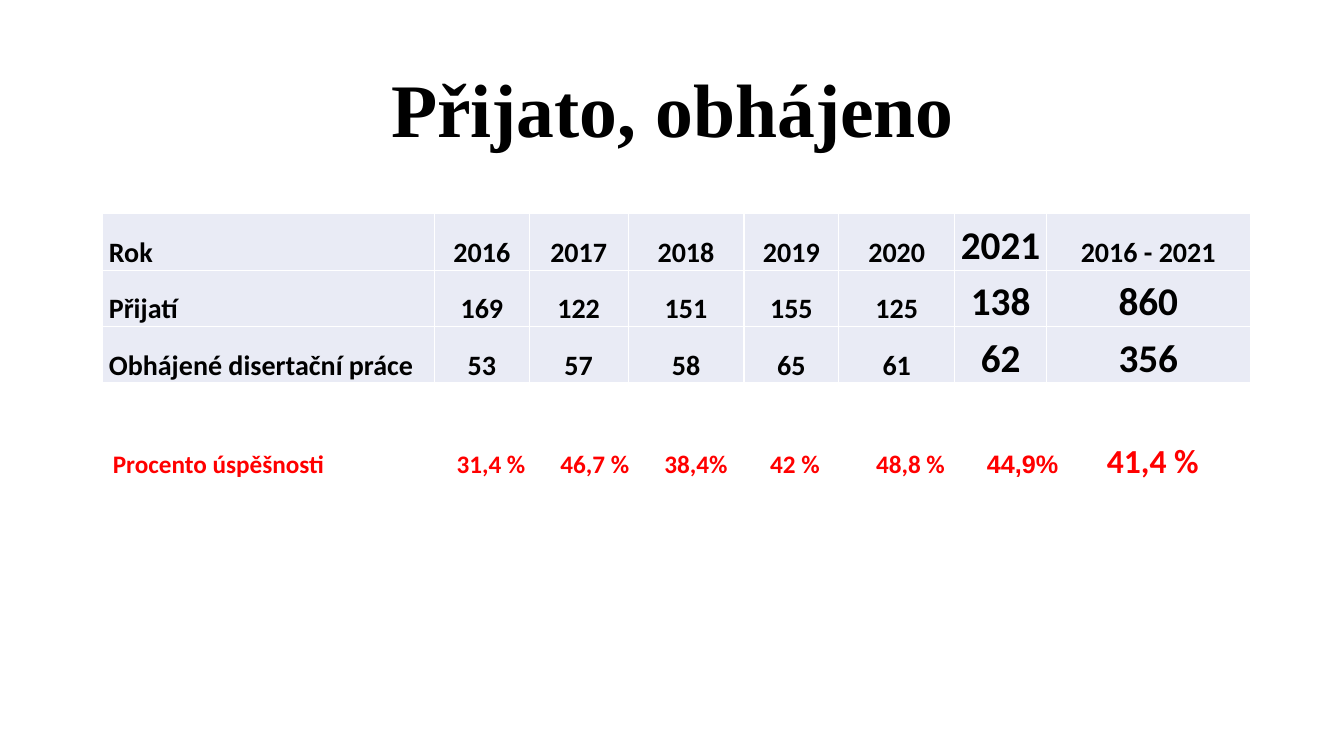
from lxml import etree
from pptx import Presentation
from pptx.dml.color import RGBColor
from pptx.enum.text import MSO_ANCHOR, PP_ALIGN
from pptx.oxml.ns import qn
from pptx.util import Inches, Pt

LEFT, CENTER = PP_ALIGN.LEFT, PP_ALIGN.CENTER
TOP, MIDDLE, BOTTOM = MSO_ANCHOR.TOP, MSO_ANCHOR.MIDDLE, MSO_ANCHOR.BOTTOM

BLACK, WHITE, RED, PALE_BLUE = "000000", "FFFFFF", "FF0000", "E9EBF5"

TABLE_ROWS = [
    ["Rok", "2016", "2017", "2018", "2019", "2020", "2021", "2016 - 2021"],
    ["Přijatí", "169", "122", "151", "155", "125", "138", "860"],
    ["Obhájené disertační práce", "53", "57", "58", "65", "61", "62", "356"],
]
COLUMN_WIDTHS = [3.29, 0.94, 0.98, 1.15, 0.94, 1.15, 0.91, 2.02]
ROW_HEIGHT = 0.56
LARGE_FROM_COLUMN = 6

# Each success rate with its tab stop in inches and its format
SUCCESS_RATES = [
    ("31,4 %", 3.41, {}),
    ("46,7 %", 4.44, {}),
    ("38,4%", 5.47, {}),
    ("42 %", 6.52, {}),
    ("48,8 %", 7.57, {}),
    ("44,9%", 8.67, {"font": "Arial"}),
    ("41,4 %", 9.86, {"size": 24}),
]


def color(value):
    return RGBColor.from_string(value)


def add_text(paragraph, text, size=18, font="Calibri", fill=BLACK,
             align=LEFT, spacing=1.07):
    paragraph.alignment = align
    paragraph.line_spacing = spacing
    run = paragraph.add_run()
    run.text = text
    run.font.name = font
    run.font.size = Pt(size)
    run.font.bold = True
    run.font.color.rgb = color(fill)


class SlideBuilder:
    def __init__(self, slide):
        self.slide = slide
        self.border_color = WHITE
        self.cell_fill = PALE_BLUE

    def text_box(self, left, top, width, height, anchor=TOP):
        box = self.slide.shapes.add_textbox(
            Inches(left), Inches(top), Inches(width), Inches(height))
        box.text_frame.word_wrap = True
        box.text_frame.vertical_anchor = anchor
        return box.text_frame.paragraphs[0]

    def cell_borders(self, cell):
        properties = cell._tc.get_or_add_tcPr()
        for position, side in enumerate(("lnL", "lnR", "lnT", "lnB")):
            line = etree.Element(qn(f"a:{side}"), w=str(Pt(1)))
            fill = etree.SubElement(line, qn("a:solidFill"))
            etree.SubElement(fill, qn("a:srgbClr"), val=self.border_color)
            properties.insert(position, line)

    def cell(self, cell, text, **text_format):
        cell.margin_left = cell.margin_right = 0
        cell.margin_top = cell.margin_bottom = 0
        cell.vertical_anchor = BOTTOM
        cell.fill.solid()
        cell.fill.fore_color.rgb = color(self.cell_fill)
        self.cell_borders(cell)
        add_text(cell.text_frame.paragraphs[0], text, **text_format)

    def table(self, left, top, rows, widths, row_height):
        table = self.slide.shapes.add_table(
            len(rows), len(widths), Inches(left), Inches(top),
            Inches(sum(widths)), Inches(row_height * len(rows))).table
        for column, width in zip(table.columns, widths):
            column.width = Inches(width)
        for row_index, values in enumerate(rows):
            table.rows[row_index].height = Inches(row_height)
            for column_index, value in enumerate(values):
                is_label = column_index == 0
                is_period = row_index == 0 and column_index == len(widths) - 1
                is_large = column_index >= LARGE_FROM_COLUMN and not is_period
                cell = table.cell(row_index, column_index)
                self.cell(cell, value, size=28 if is_large else 20,
                          align=LEFT if is_label else CENTER)
                if is_label:
                    cell.margin_left = Inches(0.06)

    def tabbed_line(self, paragraph, label, entries, fill):
        add_text(paragraph, label, fill=fill)
        tabs = etree.SubElement(paragraph._p.get_or_add_pPr(), qn("a:tabLst"))
        for text, position, text_format in entries:
            etree.SubElement(tabs, qn("a:tab"),
                             pos=str(Inches(position)), algn="l")
            add_text(paragraph, "\t" + text, fill=fill, **text_format)


def main():
    presentation = Presentation()
    presentation.slide_width = Inches(13.33)
    presentation.slide_height = Inches(7.5)
    builder = SlideBuilder(
        presentation.slides.add_slide(presentation.slide_layouts[6]))

    # Title
    title = builder.text_box(0.92, 0.4, 11.5, 1.45, anchor=MIDDLE)
    add_text(title, "Přijato, obhájeno", size=54, font="Times New Roman",
             align=CENTER, spacing=0.9)

    # Admissions and defended theses
    builder.table(1.02, 2.12, TABLE_ROWS, COLUMN_WIDTHS, ROW_HEIGHT)

    # Success rates
    rates = builder.text_box(1.02, 4.29, 11.39, 0.47)
    builder.tabbed_line(rates, "Procento úspěšnosti", SUCCESS_RATES, RED)

    presentation.save("out.pptx")


if __name__ == "__main__":
    main()
